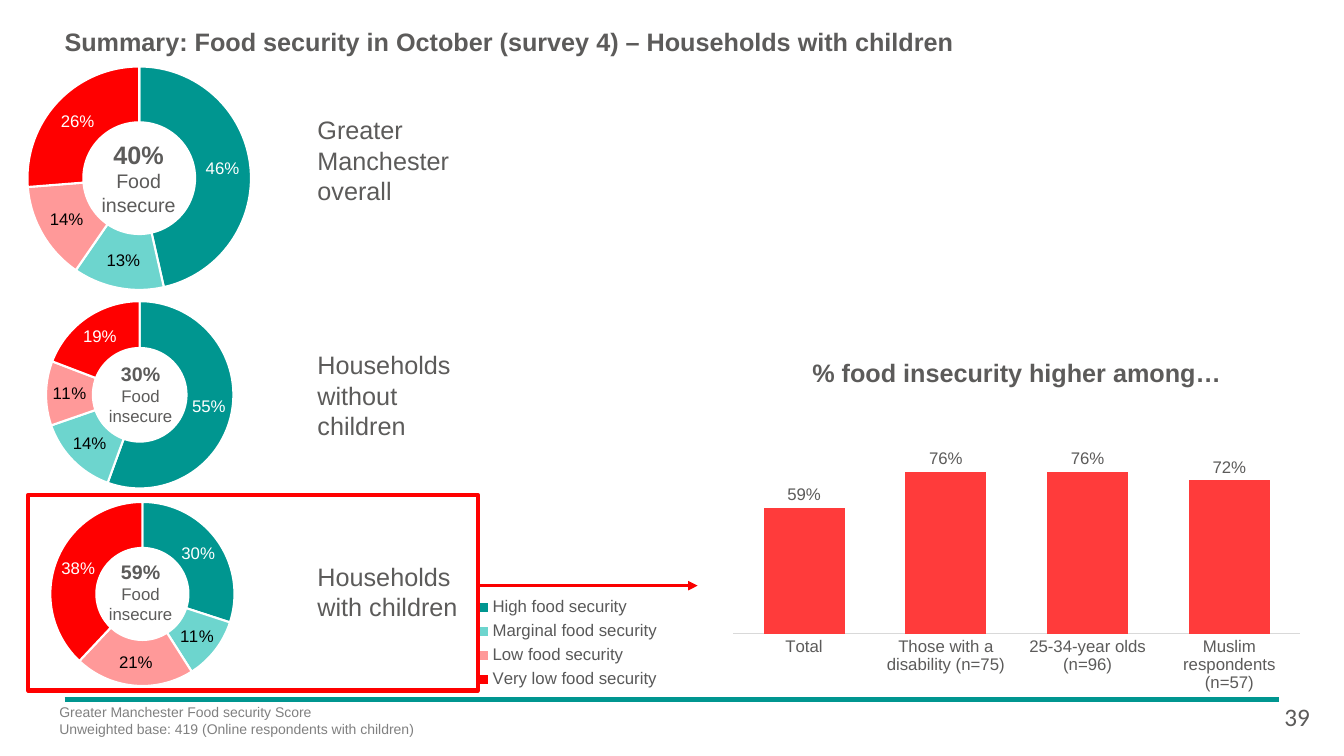
"""Build the slide on food security among households with children."""
from lxml import etree
from pptx import Presentation
from pptx.chart.data import CategoryChartData
from pptx.dml.color import RGBColor
from pptx.enum.chart import XL_CHART_TYPE, XL_LABEL_POSITION, XL_LEGEND_POSITION, XL_TICK_MARK
from pptx.enum.shapes import MSO_CONNECTOR, MSO_SHAPE
from pptx.enum.text import PP_ALIGN
from pptx.oxml.ns import qn
from pptx.util import Inches, Pt

DOUGHNUT, COLUMN = XL_CHART_TYPE.DOUGHNUT, XL_CHART_TYPE.COLUMN_CLUSTERED
LEFT, CENTER = PP_ALIGN.LEFT, PP_ALIGN.CENTER
OUTSIDE_END, NO_TICK = XL_LABEL_POSITION.OUTSIDE_END, XL_TICK_MARK.NONE
RIGHT_LEGEND, STRAIGHT, RECTANGLE = XL_LEGEND_POSITION.RIGHT, MSO_CONNECTOR.STRAIGHT, MSO_SHAPE.RECTANGLE

THEME = {
    "font": "Arial", "page_font": "Calibri",
    "text": "5C5B5A", "legend": "595959", "footer": "808080",
    "black": "000000", "white": "FFFFFF", "axis": "D9D9D9",
    "rule": "009690", "arrow": "FA0000", "frame": "FF0000", "column": "FF3B3B",
    "levels": ["009690", "6DD5CE", "FF9999", "FF0000"],
    "heading": 18, "large": 14, "body": 12, "small": 10,
}

TITLE = "Summary: Food security in October (survey 4) – Households with children"
LEVELS = ["High food security", "Marginal food security", "Low food security", "Very low food security"]
FOOTER = ["Greater Manchester Food security Score", "Unweighted base: 419 (Online respondents with children)"]
COLUMN_TITLE = "% food insecurity higher among…"
COLUMNS = {"Total": 0.59, "Those with a disability (n=75)": 0.76,
           "25-34-year olds (n=96)": 0.76, "Muslim respondents (n=57)": 0.72}

# Boxes are percentages of the slide; plot areas are fractions of their chart.
DOUGHNUTS = [
    {"label": "Greater Manchester overall", "values": [0.46, 0.13, 0.14, 0.26], "insecure": "40%",
     "box": (0.6, 6.53, 32.11, 34), "plot": (0.045, 0.021, 0.518, 0.961), "legend": None,
     "center": (6.53, 18.4, 7.58, 10.27), "inset": (0, 0), "sizes": ("heading", "large"), "label_rows": (14.53, 13.47)},
    {"label": "Households without children", "values": [0.55, 0.14, 0.11, 0.19], "insecure": "30%",
     "box": (-1.5, 37.73, 22.43, 29.33), "plot": (0.18, 0.072, 0.701, 0.845), "legend": None,
     "center": (6.15, 47.2, 8.63, 9.87), "inset": (0.1, 0.05), "sizes": ("large", "body"), "label_rows": (45.6, 13.47)},
    {"label": "Households with children", "values": [0.3, 0.11, 0.21, 0.38], "insecure": "59%",
     "box": (-1.5, 64.27, 50.94, 29.33), "plot": (0.103, 0.072, 0.269, 0.832), "legend": (0.725, 0.48, 0.28, 0.46),
     "center": (6.15, 73.47, 8.63, 9.87), "inset": (0.1, 0.05), "sizes": ("large", "body"), "label_rows": (73.6, 9.47)},
]
LABEL_LEFT, LABEL_WIDTH = 22.88, 12.68
COLUMN_BOX, COLUMN_PLOT = (53.26, 44.8, 44.79, 49.73), (0.029, 0.275, 0.942, 0.51)

presentation = Presentation()
presentation.slide_width, presentation.slide_height = Inches(13.33), Inches(7.5)
slide = presentation.slides.add_slide(presentation.slide_layouts[6])


def place(box):
    """Turn percentages of the slide into lengths."""
    sides = (presentation.slide_width, presentation.slide_height) * 2
    return [round(side * share / 100) for side, share in zip(sides, box)]


def color(value):
    """Return the colour for a hex value."""
    return RGBColor.from_string(value)


def style(font, size="body", tint=THEME["text"], bold=False, name=THEME["font"]):
    """Apply type settings to a font."""
    for key, value in {"name": name, "size": Pt(THEME[size]), "bold": bold}.items():
        setattr(font, key, value)
    font.color.rgb = color(tint)


def add_text(box, lines, inset=(0.1, 0.05), alignment=LEFT):
    """Add a text box with one paragraph for each line and its font settings."""
    frame = slide.shapes.add_textbox(*place(box)).text_frame
    horizontal, vertical = map(Inches, inset)
    for key, value in {"word_wrap": True, "margin_left": horizontal, "margin_right": horizontal,
                       "margin_top": vertical, "margin_bottom": vertical}.items():
        setattr(frame, key, value)
    for index, (text, settings) in enumerate(lines):
        paragraph = frame.add_paragraph() if index else frame.paragraphs[0]
        paragraph.alignment = alignment
        run = paragraph.add_run()
        run.text = text
        style(run.font, **settings)


def add_line(start, end, tint, width):
    """Add a straight line without a shadow."""
    connector = slide.shapes.add_connector(STRAIGHT, *place(start + end))
    connector.line.color.rgb = color(tint)
    connector.line.width = Pt(width)
    etree.SubElement(connector._element.spPr, qn("a:effectLst"))
    return connector


def set_layout(parent, position, fractions, inner=False):
    """Fix the place of a chart part inside its chart."""
    for old in parent.findall(qn("c:layout")):
        parent.remove(old)
    layout = etree.Element(qn("c:layout"))
    manual = etree.SubElement(layout, qn("c:manualLayout"))
    entries = [("layoutTarget", "inner")] if inner else []
    entries += [("xMode", "edge"), ("yMode", "edge"), *zip("xywh", fractions)]
    for tag, value in entries:
        etree.SubElement(manual, qn(f"c:{tag}")).set("val", str(value))
    parent.insert(position, layout)


def add_chart(kind, box, plot_area, categories, values, tints, label_tint):
    """Add a chart of one percentage series with coloured points."""
    data = CategoryChartData(number_format="0%")
    data.categories = categories
    data.add_series("Series 1", values)
    chart = slide.shapes.add_chart(kind, *place(box), data).chart
    style(chart.font, "small", THEME["black"])
    chart.has_title = chart.has_legend = False
    set_layout(chart.element.xpath(".//c:plotArea")[0], 0, plot_area, True)
    series = chart.plots[0].series[0]
    chart.plots[0].vary_by_categories = kind == DOUGHNUT
    for index, tint in enumerate(tints):
        fill = series.points[index].format.fill
        fill.solid()
        fill.fore_color.rgb = color(tint)
    labels = series.data_labels
    for key, value in {"show_value": True, "show_percentage": False,
                       "number_format": "0%", "number_format_is_linked": False}.items():
        setattr(labels, key, value)
    style(labels.font, tint=label_tint)
    return chart


def add_doughnut(group):
    """Add one doughnut with its centre text and group label."""
    chart = add_chart(DOUGHNUT, group["box"], group["plot"], LEVELS, group["values"],
                      THEME["levels"], THEME["black"])
    chart.element.xpath(".//c:holeSize")[0].set("val", "55")
    points = chart.plots[0].series[0].points
    for index in range(len(LEVELS)):
        points[index].format.line.color.rgb = color(THEME["white"])
        points[index].format.line.width = Pt(1.5)
    for index in (0, len(LEVELS) - 1):
        style(points[index].data_label.font, tint=THEME["white"])
    if group["legend"]:
        chart.has_legend = True
        chart.legend.position = RIGHT_LEGEND
        chart.legend.include_in_layout = False
        style(chart.legend.font, tint=THEME["legend"])
        set_layout(chart.element.xpath(".//c:legend")[0], 1, group["legend"])
    number_size, caption_size = group["sizes"]
    add_text(group["center"], [(group["insecure"], {"size": number_size, "bold": True}),
                               ("Food insecure", {"size": caption_size})], group["inset"], CENTER)
    top, height = group["label_rows"]
    add_text((LABEL_LEFT, top, LABEL_WIDTH, height), [(group["label"], {"size": "heading"})])


def add_columns():
    """Add the column chart of the groups with higher insecurity."""
    chart = add_chart(COLUMN, COLUMN_BOX, COLUMN_PLOT, list(COLUMNS), list(COLUMNS.values()),
                      [THEME["column"]] * len(COLUMNS), THEME["text"])
    chart.has_title = True
    chart.chart_title.text_frame.text = COLUMN_TITLE
    style(chart.chart_title.text_frame.paragraphs[0].runs[0].font, "heading", bold=True)
    plot = chart.plots[0]
    plot.gap_width, plot.overlap = 75, -27
    plot.series[0].data_labels.position = OUTSIDE_END
    for key, value in {"minimum_scale": 0, "maximum_scale": 0.9,
                       "has_major_gridlines": False, "visible": False}.items():
        setattr(chart.value_axis, key, value)
    axis = chart.category_axis
    axis.major_tick_mark = axis.minor_tick_mark = NO_TICK
    axis.format.line.color.rgb = color(THEME["axis"])
    axis.format.line.width = Pt(0.75)
    style(axis.tick_labels.font)


add_line((4.8, 92.53), (95.2, 92.53), THEME["rule"], 3)
add_text((4.8, 3.47, 86.27, 8.53), [(TITLE, {"size": "heading", "bold": True})], (0, 0))
for doughnut in DOUGHNUTS:
    add_doughnut(doughnut)
add_columns()
arrow = add_line((35.63, 77.47), (51.91, 77.47), THEME["arrow"], 2.25)
etree.SubElement(arrow.line._get_or_add_ln(), qn("a:tailEnd")).set("type", "triangle")
highlight = slide.shapes.add_shape(RECTANGLE, *place((2.1, 65.47, 33.46, 25.87)))
highlight.shadow.inherit = False
highlight.fill.background()
highlight.line.color.rgb = color(THEME["frame"])
highlight.line.width = Pt(3)
add_text((3.68, 92.4, 89.87, 7.47), [(line, {"size": "small", "tint": THEME["footer"]}) for line in FOOTER])
add_text((94.82, 92.13, 3.98, 5.33), [("39", {"size": "heading", "name": THEME["page_font"]})])
presentation.save("out.pptx")
